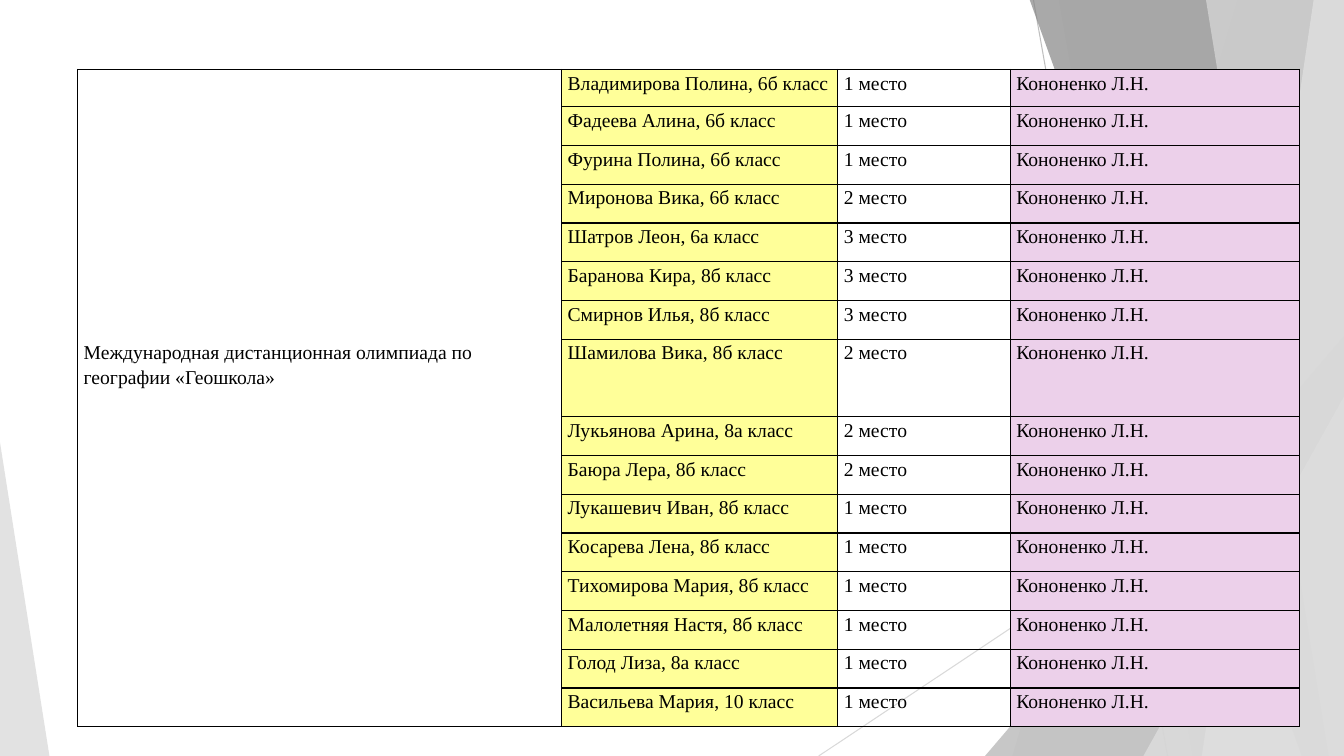
from lxml.etree import SubElement
from pptx import Presentation
from pptx.dml.color import RGBColor
from pptx.enum.shapes import MSO_CONNECTOR as CONN, MSO_SHAPE as SHAPE
from pptx.oxml.ns import qn
from pptx.util import Inches, Pt

SLIDE_W, SLIDE_H = 13.33, 7.5
COLS = [4.8, 2.74, 1.71, 2.87]
TABLE_H, FIRST_ROW_H, TITLE_ROW_H = 6.52, 0.37, 0.77
TITLE_ROW = 7
TITLE = "Международная дистанционная олимпиада по географии «Геошкола»"
TEACHER = "Кононенко Л.Н."
FILLS = [None, "FFFF99", None, "ECD0EA"]
WINNERS = [
    ("Владимирова Полина, 6б класс", 1),
    ("Фадеева Алина, 6б класс", 1),
    ("Фурина Полина, 6б класс", 1),
    ("Миронова Вика, 6б класс", 2),
    ("Шатров Леон, 6а класс", 3),
    ("Баранова Кира, 8б класс", 3),
    ("Смирнов Илья, 8б класс", 3),
    ("Шамилова Вика, 8б класс", 2),
    ("Лукьянова Арина, 8а класс", 2),
    ("Баюра Лера, 8б класс", 2),
    ("Лукашевич Иван, 8б класс", 1),
    ("Косарева Лена, 8б класс", 1),
    ("Тихомирова Мария, 8б класс", 1),
    ("Малолетняя Настя, 8б класс", 1),
    ("Голод Лиза, 8а класс", 1),
    ("Васильева Мария, 10 класс", 1),
]


def rgb(color):
    """Turn a hex string into a colour."""
    return RGBColor.from_string(color)


def paint(s, color, opacity):
    """Fill a shape with a translucent colour and no outline."""
    s.shadow.inherit = False
    s.fill.solid()
    s.fill.fore_color.rgb = rgb(color)
    s.line.fill.background()
    clr = s.element.spPr.find(qn("a:solidFill")).find(qn("a:srgbClr"))
    SubElement(clr, qn("a:alpha"), val=str(opacity * 1000))


def add_line(slide, x1, y1, x2, y2, color):
    """Draw a thin background line."""
    s = slide.shapes.add_connector(
        CONN.STRAIGHT, Inches(x1), Inches(y1), Inches(x2), Inches(y2))
    s.line.color.rgb = rgb(color)
    s.line.width = Pt(0.75)
    SubElement(s.element.spPr, qn("a:effectLst"))


def add_panel(slide, top_x, bottom_x, color, opacity, top_right=SLIDE_W):
    """Draw a slanted panel reaching the right edge of the slide."""
    top = Inches(-0.01)
    fb = slide.shapes.build_freeform(Inches(top_x), top)
    fb.add_line_segments([
        (Inches(top_right), top),
        (Inches(SLIDE_W), Inches(SLIDE_H)),
        (Inches(bottom_x), Inches(SLIDE_H)),
    ])
    paint(fb.convert_to_shape(), color, opacity)


def add_corner(slide, x, y, w, apex, color, opacity):
    """Draw a triangle standing on the bottom edge of the slide."""
    s = slide.shapes.add_shape(
        SHAPE.ISOSCELES_TRIANGLE, Inches(x), Inches(y), Inches(w), Inches(SLIDE_H - y))
    s.adjustments[0] = apex
    paint(s, color, opacity)


def set_borders(cell, sides):
    """Draw black borders on the given sides and none on the others."""
    tcPr = cell._tc.get_or_add_tcPr()
    for side in "LRTB":
        ln = SubElement(tcPr, qn(f"a:ln{side}"), w=str(Pt(1)))
        if side in sides:
            SubElement(SubElement(ln, qn("a:solidFill")), qn("a:srgbClr"), val="000000")
        else:
            SubElement(ln, qn("a:noFill"))


def fill_cell(cell, text, sides, color):
    """Set the borders, fill and text of one cell."""
    set_borders(cell, sides)
    if color:
        cell.fill.solid()
        cell.fill.fore_color.rgb = rgb(color)
    else:
        cell.fill.background()
    cell.margin_left = cell.margin_right = Inches(0.06)
    cell.margin_top = cell.margin_bottom = 0
    p = cell.text_frame.paragraphs[0]
    p.line_spacing = 1.15
    if text:
        r = p.add_run()
        r.text = text
        r.font.name = "Times New Roman"
        r.font.size = Pt(14)
        r.font.color.rgb = rgb("000000")


def add_results(slide):
    """Build the table of winners."""
    last = len(WINNERS) - 1
    row_h = (TABLE_H - FIRST_ROW_H - TITLE_ROW_H) / (last - 1)
    heights = {0: FIRST_ROW_H, TITLE_ROW: TITLE_ROW_H}
    table = slide.shapes.add_table(
        len(WINNERS), len(COLS), Inches(0.77), Inches(0.69),
        Inches(sum(COLS)), Inches(TABLE_H)).table
    table.first_row = table.horz_banding = False
    for col, width in zip(table.columns, COLS):
        col.width = Inches(width)
    for i, (pupil, place) in enumerate(WINNERS):
        table.rows[i].height = Inches(heights.get(i, row_h))
        title = TITLE if i == TITLE_ROW else ""
        title_sides = "LR" + ("T" if i == 0 else "") + ("B" if i == last else "")
        for j, text in enumerate([title, pupil, f"{place} место", TEACHER]):
            sides = "LRTB" if j else title_sides
            fill_cell(table.cell(i, j), text, sides, FILLS[j])


def add_backdrop(slide):
    """Draw the faceted background."""
    add_line(slide, 10.25, 0, 11.58, SLIDE_H, "BFBFBF")
    add_line(slide, SLIDE_W, 4.03, 8.12, SLIDE_H, "D9D9D9")
    add_panel(slide, 12.28, 10.04, "DDDDDD", 30)
    add_panel(slide, 10.5, 11.83, "DDDDDD", 20)
    add_corner(slide, 9.77, 3.33, 3.56, 1, "B2B2B2", 72)
    add_panel(slide, 10.21, 12.91, "858585", 70)
    add_panel(slide, 13.03, 11.92, "EBEBEB", 70)
    add_panel(slide, 11.96, 13.18, "DDDDDD", 65)
    add_corner(slide, 11.34, 3.93, 1.99, 1, "DDDDDD", 80)
    add_corner(slide, 0, 4.39, 0.49, 0, "DDDDDD", 85)


def main():
    """Build and save the slide."""
    prs = Presentation()
    prs.slide_width, prs.slide_height = Inches(SLIDE_W), Inches(SLIDE_H)
    slide = prs.slides.add_slide(prs.slide_layouts[6])
    add_backdrop(slide)
    add_results(slide)
    prs.save("out.pptx")


if __name__ == "__main__":
    main()
